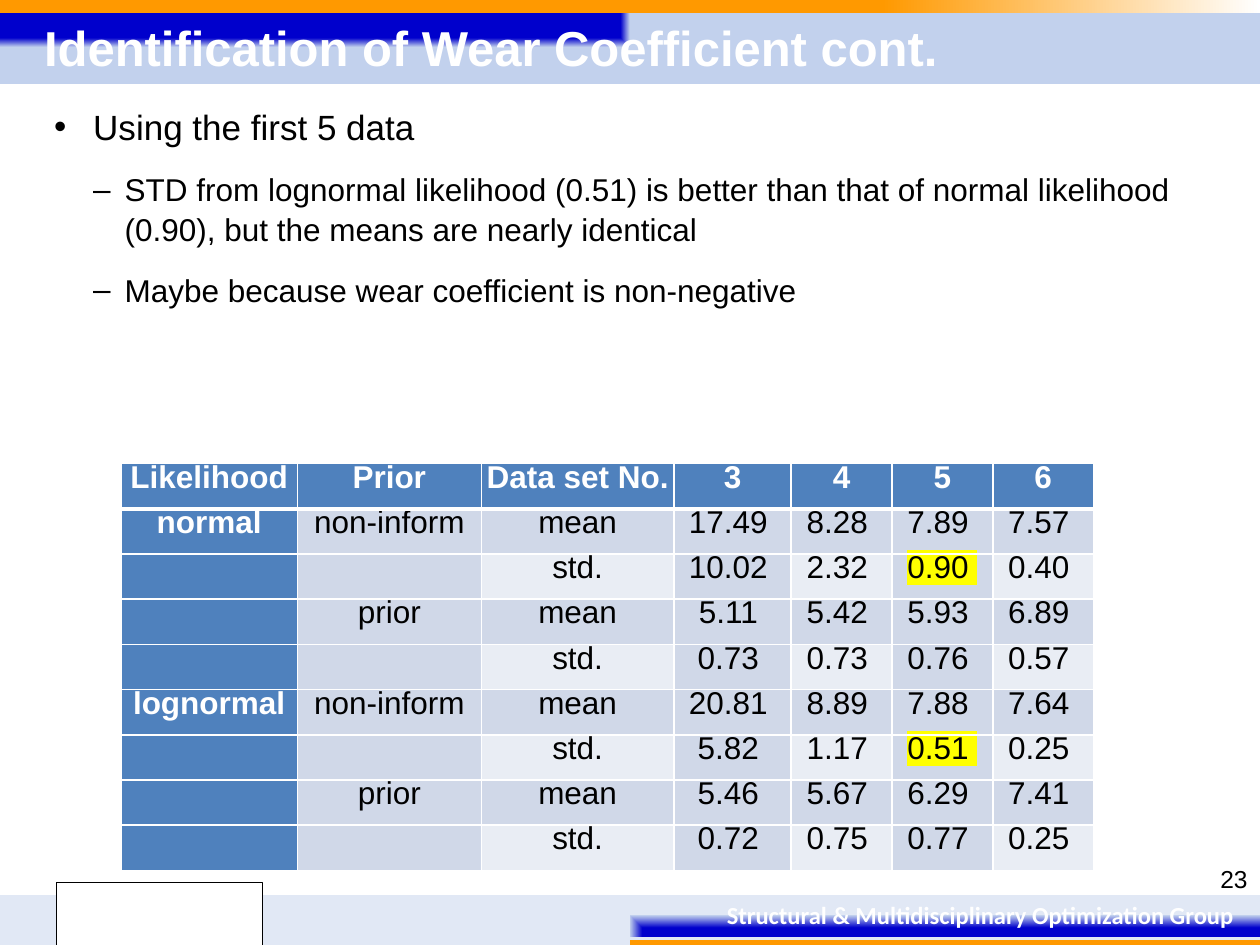
from lxml import etree
from pptx import Presentation
from pptx.dml.color import RGBColor
from pptx.enum.shapes import MSO_SHAPE
from pptx.enum.text import MSO_ANCHOR, MSO_AUTO_SIZE, PP_ALIGN
from pptx.oxml import parse_xml
from pptx.oxml.ns import nsdecls, qn
from pptx.util import Inches, Pt

RECTANGLE = MSO_SHAPE.RECTANGLE
MIDDLE, TOP = MSO_ANCHOR.MIDDLE, MSO_ANCHOR.TOP
LEFT, CENTER, RIGHT = PP_ALIGN.LEFT, PP_ALIGN.CENTER, PP_ALIGN.RIGHT
NO_FIT = MSO_AUTO_SIZE.NONE

BLUE, PALE_BLUE, MIST = "0000CC", "C2D1ED", "E1E8F5"
ORANGE, WHITE, BLACK = "FF9900", "FFFFFF", "000000"
HEADER_FILL, DARK_BAND, LIGHT_BAND = "4F81BD", "D0D8E8", "E9EDF4"
HIGHLIGHT = "FFFF00"

TOP_LEFT = '<a:path path="rect"><a:fillToRect r="100000" b="100000"/></a:path>'
BOTTOM_RIGHT = '<a:path path="rect"><a:fillToRect l="100000" t="100000"/></a:path>'
RIGHTWARD = '<a:lin ang="0" scaled="1"/>'

# Box, gradient stops (percent, colour), gradient direction
BANDS = [
    ((0, 0.08, 10, 0.59), [(25, BLUE), (75, BLUE), (100, PALE_BLUE)], TOP_LEFT),
    ((0, 0, 10, 0.1),
     [(46, ORANGE), (70, ORANGE), (100, WHITE), (100, MIST)], RIGHTWARD),
    ((0, 7.42, 10, 0.08),
     [(50, ORANGE), (93, ORANGE), (100, WHITE), (100, MIST)], BOTTOM_RIGHT),
    ((0, 7.1, 10, 0.33), [(40, BLUE), (100, PALE_BLUE), (100, MIST)], BOTTOM_RIGHT),
]

# Level, text
POINTS = [
    (0, "Using the first 5 data"),
    (1, "STD from lognormal likelihood (0.51) is better than that of normal "
        "likelihood (0.90), but the means are nearly identical"),
    (1, "Maybe because wear coefficient is non-negative"),
]
# Bullet, text size, text indent in inches, hanging indent in inches
LEVELS = [("•", 20, 0.31, 0.31), ("–", 18, 0.56, 0.25)]

COLUMN_WIDTHS = [1.4, 1.46, 1.53, 0.93, 0.8, 0.8, 0.8]
TABLE_ROWS = [
    ["Likelihood", "Prior", "Data set No.", "3", "4", "5", "6"],
    ["normal", "non-inform", "mean", "17.49 ", "8.28 ", "7.89 ", "7.57 "],
    ["", "", "std.", "10.02 ", "2.32 ", "0.90 ", "0.40 "],
    ["", "prior", "mean", "5.11 ", "5.42 ", "5.93 ", "6.89 "],
    ["", "", "std.", "0.73 ", "0.73 ", "0.76 ", "0.57 "],
    ["lognormal", "non-inform", "mean", "20.81 ", "8.89 ", "7.88 ", "7.64 "],
    ["", "", "std.", "5.82 ", "1.17 ", "0.51 ", "0.25 "],
    ["", "prior", "mean", "5.46 ", "5.67 ", "6.29 ", "7.41 "],
    ["", "", "std.", "0.72 ", "0.75 ", "0.77 ", "0.25 "],
]
HIGHLIGHTED = {(2, 5), (6, 5)}


def color(value):
    return RGBColor.from_string(value)


def inches(box):
    return [Inches(length) for length in box]


def place(shape, box):
    shape.left, shape.top, shape.width, shape.height = inches(box)


def set_font(para, size, value, bold=False, name="Arial"):
    para.font.name = name
    para.font.size = Pt(size)
    para.font.bold = bold
    para.font.color.rgb = color(value)


def add_rectangle(page, box):
    shape = page.shapes.add_shape(RECTANGLE, *inches(box))
    shape.shadow.inherit = False
    return shape


def add_band(page, box, stops, direction):
    band = add_rectangle(page, box)
    band.line.fill.background()
    stop_list = "".join(
        f'<a:gs pos="{percent * 1000}"><a:srgbClr val="{value}"/></a:gs>'
        for percent, value in stops)
    gradient = parse_xml(f'<a:gradFill {nsdecls("a")} rotWithShape="1">'
                         f"<a:gsLst>{stop_list}</a:gsLst>{direction}</a:gradFill>")
    band.element.spPr.find(qn("a:prstGeom")).addnext(gradient)


def add_emblem_box(page, box):
    emblem = add_rectangle(page, box)
    emblem.fill.solid()
    emblem.fill.fore_color.rgb = color(WHITE)
    emblem.line.color.rgb = color(BLACK)
    emblem.line.width = Pt(0.25)


def add_label(page, box, text, align, anchor, wrap=True, **font):
    frame = page.shapes.add_textbox(*inches(box)).text_frame
    frame.word_wrap = wrap
    frame.vertical_anchor = anchor
    para = frame.paragraphs[0]
    para.text = text
    para.alignment = align
    set_font(para, 14, **font)


def bring_to_front(shape):
    shape.element.getparent().append(shape.element)


def fill_body(body, box):
    place(body, box)
    bring_to_front(body)
    frame = body.text_frame
    frame.auto_size = NO_FIT
    for index, (level, text) in enumerate(POINTS):
        para = frame.add_paragraph() if index else frame.paragraphs[0]
        para.text = text
        para.level = level
        para.line_spacing = 1.05
        para.space_before = Pt(12 if index else 0)
        bullet, size, indent, hanging = LEVELS[level]
        properties = para._p.get_or_add_pPr()
        properties.set("marL", str(Inches(indent)))
        properties.set("indent", str(-Inches(hanging)))
        etree.SubElement(properties, qn("a:buChar")).set("char", bullet)
        set_font(para, size, BLACK)


def fill_title(title, box):
    place(title, box)
    bring_to_front(title)
    frame = title.text_frame
    frame.auto_size = NO_FIT
    frame.vertical_anchor = MIDDLE
    para = frame.paragraphs[0]
    para.text = "Identification of Wear Coefficient cont."
    para.alignment = LEFT
    set_font(para, 28, WHITE, bold=True)


def cell_fill(row, column):
    if row == 0 or column == 0:
        return HEADER_FILL
    is_light = row % 2 == 0 and column % 2 == 0
    return LIGHT_BAND if is_light else DARK_BAND


def set_borders(cell, row):
    """White rules, with a heavier one between the header and the first row."""
    widths = {"L": 1, "R": 1, "T": 3 if row == 1 else 1, "B": 3 if row == 0 else 1}
    for side, width in widths.items():
        cell._tc.get_or_add_tcPr().append(parse_xml(
            f'<a:ln{side} {nsdecls("a")} w="{Pt(width)}"><a:solidFill>'
            f'<a:srgbClr val="{WHITE}"/></a:solidFill></a:ln{side}>'))


def fill_cell(cell, row, column):
    set_borders(cell, row)
    cell.fill.solid()
    cell.fill.fore_color.rgb = color(cell_fill(row, column))
    cell.margin_left = cell.margin_right = cell.margin_top = cell.margin_bottom = 0
    cell.vertical_anchor = MIDDLE
    para = cell.text_frame.paragraphs[0]
    para.text = TABLE_ROWS[row][column]
    para.alignment = CENTER
    para.line_spacing = Pt(10)
    para.space_before = Pt(3)
    is_heading = row == 0 or column == 0
    set_font(para, 18, WHITE if is_heading else BLACK, bold=is_heading)
    if (row, column) in HIGHLIGHTED:
        para.runs[0]._r.get_or_add_rPr().append(parse_xml(
            f'<a:highlight {nsdecls("a")}><a:srgbClr val="{HIGHLIGHT}"/></a:highlight>'))


def add_results_table(page, box):
    table = page.shapes.add_table(
        len(TABLE_ROWS), len(COLUMN_WIDTHS), *inches(box)).table
    for column, width in zip(table.columns, COLUMN_WIDTHS):
        column.width = Inches(width)
    for row in range(len(TABLE_ROWS)):
        table.rows[row].height = Inches(box[3] / len(TABLE_ROWS))
        for column in range(len(COLUMN_WIDTHS)):
            fill_cell(table.cell(row, column), row, column)


def main():
    deck = Presentation()
    deck.slide_width, deck.slide_height = Inches(10), Inches(7.5)
    page = deck.slides.add_slide(deck.slide_layouts[1])
    for box, stops, direction in BANDS:
        add_band(page, box, stops, direction)
    add_emblem_box(page, (0.45, 7, 1.63, 0.5))
    add_label(page, (5.67, 7.09, 4.27, 0.34),
              "Structural & Multidisciplinary Optimization Group",
              LEFT, TOP, wrap=False, value=WHITE, bold=True, name="Calibri")
    add_label(page, (9.24, 6.83, 0.76, 0.29), "23", RIGHT, MIDDLE, value=BLACK)
    fill_body(page.placeholders[1], (0.33, 0.77, 9.33, 6.23))
    fill_title(page.shapes.title, (0.25, 0.08, 9.42, 0.59))
    add_results_table(page, (0.96, 3.68, 7.72, 3.23))
    deck.save("out.pptx")


if __name__ == "__main__":
    main()
